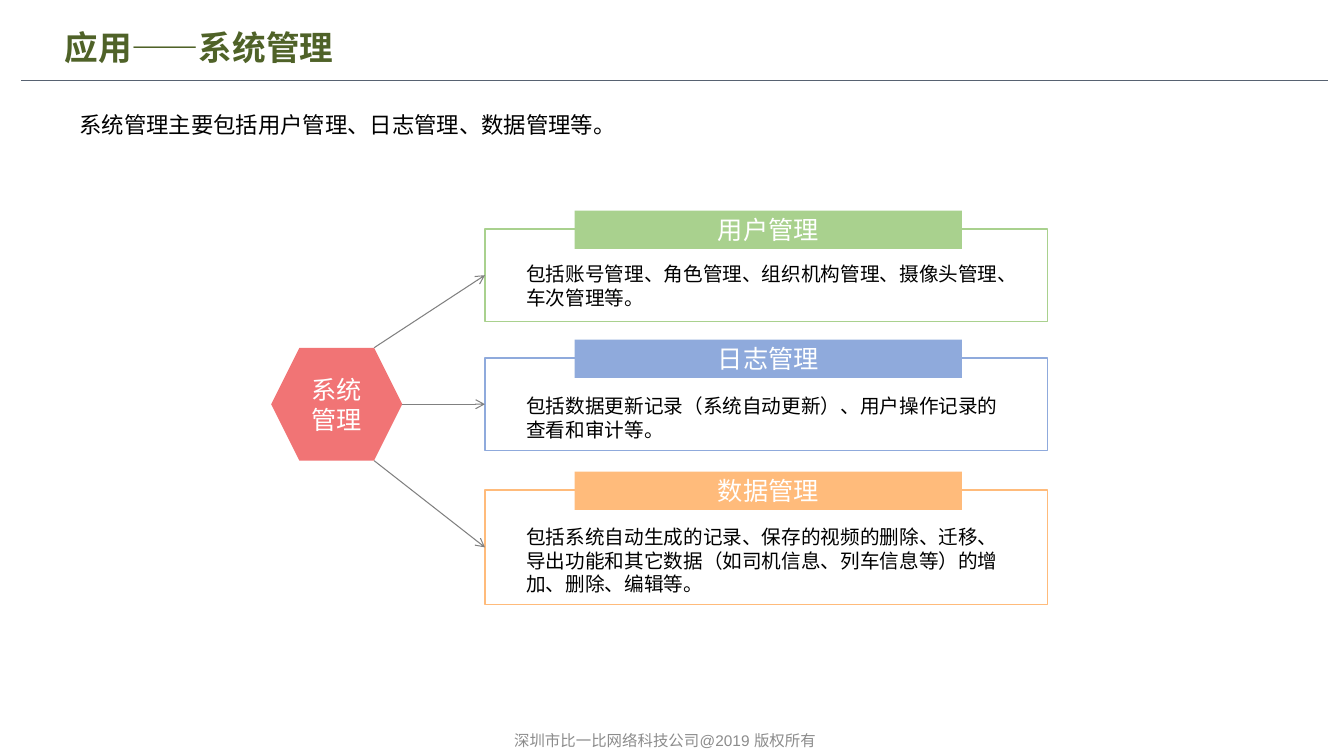
from dataclasses import dataclass

from lxml.etree import SubElement
from pptx import Presentation
from pptx.dml.color import RGBColor
from pptx.enum.shapes import MSO_CONNECTOR, MSO_SHAPE
from pptx.enum.text import MSO_ANCHOR, MSO_AUTO_SIZE, PP_ALIGN
from pptx.oxml.ns import qn
from pptx.util import Inches, Pt


@dataclass(frozen=True)
class Theme:
    font: str = "Arial"
    title_color: str = "4F6228"
    text_color: str = "000000"
    label_color: str = "FFFFFF"
    footer_color: str = "8C8C8C"
    rule_color: str = "576271"
    arrow_color: str = "808080"
    hub_color: str = "F17475"
    title_size: int = 24
    label_size: int = 18
    lead_size: int = 16
    detail_size: int = 14
    footer_size: int = 11


@dataclass(frozen=True)
class Box:
    left: float
    top: float
    width: float
    height: float


@dataclass(frozen=True)
class Panel:
    name: str
    detail: str
    color: str
    top: float
    height: float
    detail_top: float
    detail_height: float


THEME = Theme()
HUB = Box(2.69, 3.45, 1.3, 1.12)
HUB_CORNER = HUB.height / 4
PANEL_LEFT, PANEL_WIDTH = 4.81, 5.58
HEADER_LEFT, HEADER_WIDTH, HEADER_HEIGHT, HEADER_RISE = 5.7, 3.84, 0.38, 0.18
DETAIL_LEFT, DETAIL_WIDTH = 5.14, 4.96
SMALL_INSET = (0.08, 0.04)

PANELS = [
    Panel("用户管理", "包括账号管理、角色管理、组织机构管理、摄像头管理、车次管理等。",
          "A9D18E", 2.27, 0.92, 2.56, 0.55),
    Panel("日志管理", "包括数据更新记录（系统自动更新）、用户操作记录的查看和审计等。",
          "8FAADC", 3.55, 0.92, 3.87, 0.55),
    Panel("数据管理", "包括系统自动生成的记录、保存的视频的删除、迁移、"
          "导出功能和其它数据（如司机信息、列车信息等）的增加、删除、编辑等。",
          "FFBB7B", 4.86, 1.14, 5.17, 0.78),
]


def place(shape, box: Box) -> None:
    for name in ("left", "top", "width", "height"):
        setattr(shape, name, Inches(getattr(box, name)))


def write(shape, text: str, size: int, color: str, bold: bool = False,
          align=PP_ALIGN.LEFT, anchor=MSO_ANCHOR.TOP,
          inset: tuple[float, float] = (0, 0)):
    """Fill a shape with one formatted paragraph and return it."""
    across, down = map(Inches, inset)
    frame = shape.text_frame
    frame.text = text
    para = frame.paragraphs[0]
    frame_format = {"word_wrap": True, "auto_size": MSO_AUTO_SIZE.NONE,
                    "vertical_anchor": anchor,
                    "margin_left": across, "margin_right": across,
                    "margin_top": down, "margin_bottom": down}
    para_format = {"alignment": align, "space_before": Pt(0)}
    font_format = {"name": THEME.font, "size": Pt(size), "bold": bold}
    span_font = para.runs[0].font
    for target, values in ((frame, frame_format), (para, para_format),
                           (span_font, font_format)):
        for name, value in values.items():
            setattr(target, name, value)
    span_font.color.rgb = RGBColor.from_string(color)
    return para


def add_text(slide, box: Box, text: str, size: int, color: str, **format_values):
    shape = slide.shapes.add_textbox(0, 0, 0, 0)
    place(shape, box)
    return write(shape, text, size, color, **format_values)


def add_block(slide, kind, box: Box, fill: str = "", line: str = ""):
    shape = slide.shapes.add_shape(kind, 0, 0, 0, 0)
    place(shape, box)
    shape.shadow.inherit = False
    if fill:
        shape.fill.solid()
        shape.fill.fore_color.rgb = RGBColor.from_string(fill)
    else:
        shape.fill.background()
    if line:
        shape.line.color.rgb = RGBColor.from_string(line)
        shape.line.width = Pt(1)
    else:
        shape.line.fill.background()
    return shape


def add_label(slide, kind, box: Box, fill: str, text: str) -> None:
    write(add_block(slide, kind, box, fill=fill), text, THEME.label_size,
          THEME.label_color, align=PP_ALIGN.CENTER, anchor=MSO_ANCHOR.MIDDLE,
          inset=SMALL_INSET)


def add_line(slide, start: tuple[float, float], end: tuple[float, float],
             color: str, width: float, arrow: bool = False) -> None:
    line = slide.shapes.add_connector(MSO_CONNECTOR.STRAIGHT,
                                      *map(Inches, start + end))
    line.line.color.rgb = RGBColor.from_string(color)
    line.line.width = Pt(width)
    if arrow:
        SubElement(line.line._get_or_add_ln(), qn("a:tailEnd"), type="arrow")
    SubElement(line._element.spPr, qn("a:effectLst"))


def add_panel(slide, panel: Panel) -> None:
    add_block(slide, MSO_SHAPE.RECTANGLE,
              Box(PANEL_LEFT, panel.top, PANEL_WIDTH, panel.height),
              line=panel.color)
    add_label(slide, MSO_SHAPE.RECTANGLE,
              Box(HEADER_LEFT, panel.top - HEADER_RISE, HEADER_WIDTH, HEADER_HEIGHT),
              panel.color, panel.name)
    add_text(slide, Box(DETAIL_LEFT, panel.detail_top, DETAIL_WIDTH, panel.detail_height),
             panel.detail, THEME.detail_size, THEME.text_color, inset=SMALL_INSET)


def main() -> None:
    deck = Presentation()
    deck.slide_width, deck.slide_height = Inches(13.33), Inches(7.5)
    page = deck.slides.add_slide(deck.slide_layouts[1])

    # Footer and title rule
    add_text(page, Box(4.09, 7.23, 5.01, 0.24), "深圳市比一比网络科技公司@2019 版权所有",
             THEME.footer_size, THEME.footer_color,
             align=PP_ALIGN.CENTER, anchor=MSO_ANCHOR.MIDDLE)
    add_line(page, (13.17, 0.8), (0.21, 0.8), THEME.rule_color, 1)

    # Title and lead sentence
    title, lead = page.placeholders
    place(title, Box(0.54, 0.22, 3.84, 0.5))
    write(title, "应用——系统管理", THEME.title_size, THEME.title_color,
          bold=True, inset=(0.1, 0.05))
    place(lead, Box(0.54, 1.1, 12, 0.37))
    para = write(lead, "系统管理主要包括用户管理、日志管理、数据管理等。",
                 THEME.lead_size, THEME.text_color)
    properties = para._p.get_or_add_pPr()
    properties.set("marL", "0")
    properties.set("indent", str(Inches(0.25)))
    SubElement(properties, qn("a:buNone"))

    # Hub and the panels it points to
    add_label(page, MSO_SHAPE.HEXAGON, HUB, THEME.hub_color, "系统管理")
    right, bottom = HUB.left + HUB.width, HUB.top + HUB.height
    starts = [(right - HUB_CORNER, HUB.top),
              (right, HUB.top + HUB.height / 2),
              (right - HUB_CORNER, bottom)]
    for panel, start in zip(PANELS, starts):
        add_panel(page, panel)
        add_line(page, start, (PANEL_LEFT, panel.top + panel.height / 2),
                 THEME.arrow_color, 0.75, arrow=True)

    deck.save("out.pptx")


if __name__ == "__main__":
    main()
